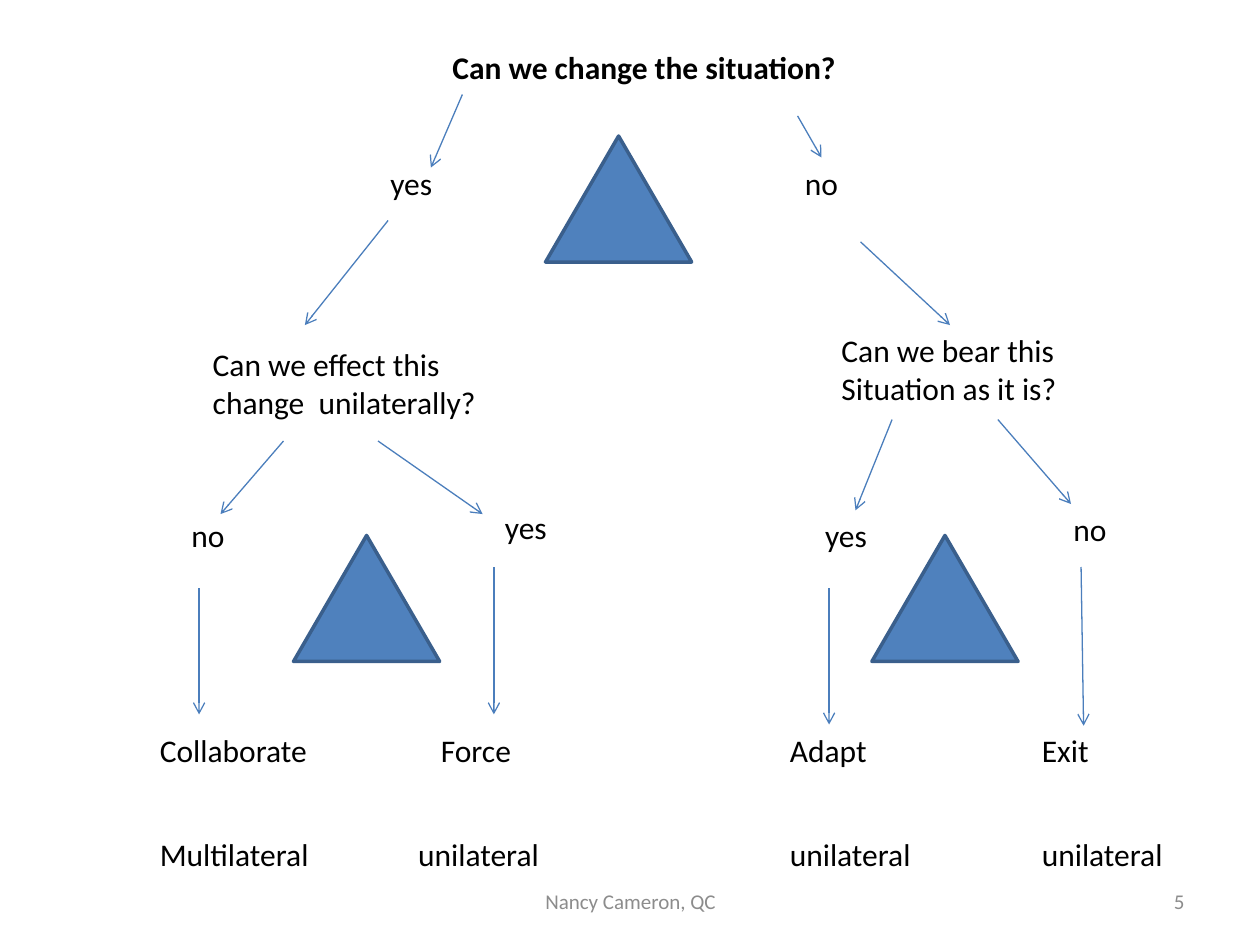
import pptx
import pptx.dml.color
import pptx.enum.shapes
import pptx.enum.text
import pptx.oxml.ns
import pptx.util
from lxml import etree
from pptx.util import Inches

COLORS = {"text": "000000", "muted": "8C8C8C", "fill": "4F81BD",
          "outline": "3A5F8C", "arrow": "4B7EBC"}
ALIGN = pptx.enum.text.PP_ALIGN
ANCHOR = pptx.enum.text.MSO_ANCHOR
FIT = pptx.enum.text.MSO_AUTO_SIZE
qn = pptx.oxml.ns.qn


def rgb(name):
    return pptx.dml.color.RGBColor.from_string(COLORS[name])


def write(box, text, size=18, color="text", bold=False, align=ALIGN.LEFT, **frame_format):
    frame = box.text_frame
    frame.text = text
    for name, value in frame_format.items():
        setattr(frame, name, value)
    font_format = {"name": "Calibri", "size": pptx.util.Pt(size), "bold": bold}
    for para in frame.paragraphs:
        para.alignment = align
        for span in para.runs:
            for name, value in font_format.items():
                setattr(span.font, name, value)
            span.font.color.rgb = rgb(color)


deck = pptx.Presentation()
deck.slide_width, deck.slide_height = Inches(10), Inches(7.5)
page = deck.slides.add_slide(deck.slide_layouts[5])  # Title Only

# Triangles between the branches
for left, top in [(4.33, 1.08), (2.33, 4.25), (6.92, 4.25)]:
    triangle = page.shapes.add_shape(
        pptx.enum.shapes.MSO_SHAPE.ISOSCELES_TRIANGLE,
        Inches(left), Inches(top), Inches(1.16), Inches(1))
    triangle.shadow.inherit = False
    triangle.fill.solid()
    triangle.fill.fore_color.rgb = rgb("fill")
    triangle.line.color.rgb = rgb("outline")
    triangle.line.width = pptx.util.Pt(2)

# Opening question
title = page.shapes.title
title_place = {"left": 3.49, "top": 0.33, "width": 3.35, "height": 0.4}
for name, value in title_place.items():
    setattr(title, name, Inches(value))
write(title, "Can we change the situation?", bold=True, word_wrap=False,
      vertical_anchor=ANCHOR.TOP, auto_size=FIT.SHAPE_TO_FIT_TEXT)

# Answers and follow-up questions: text, left, top, width, height, wrap
labels = [
    ("yes", 3, 1.25, 0.54, 0.4, False),
    ("no", 6.29, 1.25, 0.47, 0.4, False),
    ("Can we effect this change  unilaterally?", 1.59, 2.69, 2.74, 0.71, True),
    ("Can we bear this\nSituation as it is?", 6.58, 2.58, 1.91, 0.71, False),
    ("no", 1.42, 4.05, 0.47, 0.4, False),
    ("yes", 3.91, 3.98, 0.54, 0.4, False),
    ("yes", 6.45, 4.05, 0.69, 0.4, True),
    ("no", 8.42, 4, 0.47, 0.4, False),
]
for text, left, top, width, height, wrap in labels:
    box = page.shapes.add_textbox(Inches(left), Inches(top), Inches(width), Inches(height))
    write(box, text, word_wrap=wrap, auto_size=FIT.SHAPE_TO_FIT_TEXT)

# Outcome rows, aligned with tab stops
outcomes = [
    (["Collaborate", "Force", "Adapt", "Exit"], 5.75, 7.75, [2.23, 5, 7]),
    (["Multilateral", "unilateral", "unilateral", "unilateral"], 6.58, 8.24, [2.05, 5, 7]),
]
for words, top, width, stops in outcomes:
    box = page.shapes.add_textbox(Inches(1.17), Inches(top), Inches(width), Inches(0.4))
    write(box, "\t".join(words), word_wrap=True, auto_size=FIT.SHAPE_TO_FIT_TEXT)
    para_format = box.text_frame.paragraphs[0]._p.get_or_add_pPr()
    tab_list = etree.SubElement(para_format, qn("a:tabLst"))
    for stop in stops:
        etree.SubElement(tab_list, qn("a:tab"), pos=str(Inches(stop)), algn="l")

# Footer and page number
for text, left, width, align in [("Nancy Cameron, QC", 3.42, 3.17, ALIGN.CENTER),
                                 ("5", 7.17, 2.33, ALIGN.RIGHT)]:
    box = page.shapes.add_textbox(Inches(left), Inches(6.95), Inches(width), Inches(0.4))
    write(box, text, size=12, color="muted", align=align,
          word_wrap=True, vertical_anchor=ANCHOR.MIDDLE)

# Arrows: start x, start y, end x, end y
arrows = [
    (3.67, 0.75, 3.42, 1.33), (6.33, 0.92, 6.52, 1.25),
    (3.08, 1.75, 2.42, 2.58), (6.83, 1.92, 7.54, 2.58),
    (2.25, 3.5, 1.75, 4.08), (3, 3.5, 3.83, 4.08),
    (7.08, 3.33, 6.79, 4.05), (7.92, 3.33, 8.5, 4),
    (1.58, 4.67, 1.58, 5.67), (3.92, 4.5, 3.92, 5.67),
    (6.58, 4.67, 6.58, 5.75), (8.58, 4.5, 8.6, 5.76),
]
for ends in arrows:
    arrow = page.shapes.add_connector(
        pptx.enum.shapes.MSO_CONNECTOR.STRAIGHT, *[Inches(end) for end in ends])
    arrow.line.color.rgb = rgb("arrow")
    arrow.line.width = pptx.util.Pt(0.75)
    etree.SubElement(arrow.line._get_or_add_ln(), qn("a:tailEnd"), type="arrow")
    etree.SubElement(arrow._element.spPr, qn("a:effectLst"))

deck.save("out.pptx")
